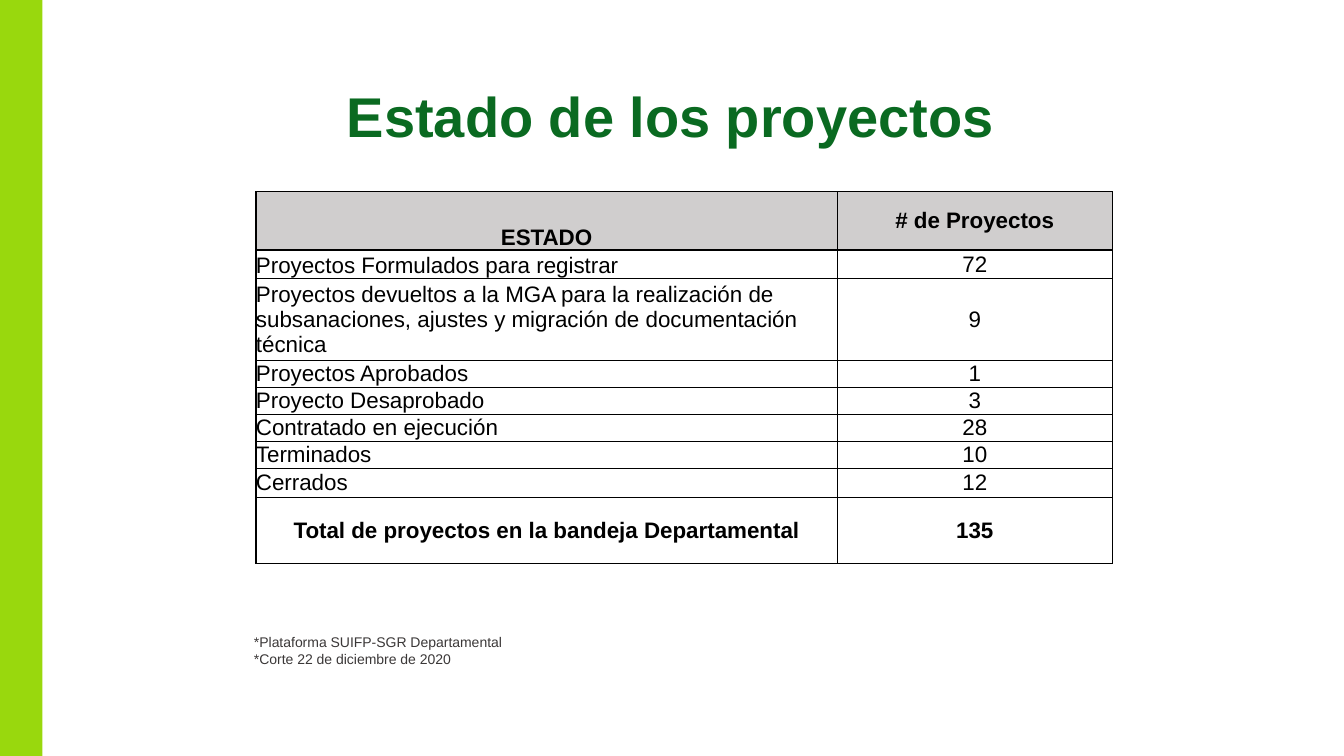
from lxml import etree
from pptx import Presentation
from pptx import util as u
from pptx.dml.color import RGBColor
from pptx.enum import shapes, text
from pptx.oxml import ns

HUES = {"title": "0A6A21", "band": "99D80D", "head": "D0CECE",
        "ink": "000000", "note": "3B3838"}
ROWS = [
    ("ESTADO", "# de Proyectos", 1.47),
    ("Proyectos Formulados para registrar", "72", 0.72),
    ("Proyectos devueltos a la MGA para la realización de subsanaciones, "
     "ajustes y migración de documentación técnica", "9", 2.06),
    ("Proyectos Aprobados", "1", 0.68),
    ("Proyecto Desaprobado", "3", 0.68),
    ("Contratado en ejecución", "28", 0.68),
    ("Terminados", "10", 0.69),
    ("Cerrados", "12", 0.72),
    ("Total de proyectos en la bandeja Departamental", "135", 1.67),
]
NOTES = ["*Plataforma SUIFP-SGR Departamental", "*Corte 22 de diciembre de 2020"]
WIDE, HIGH = u.Cm(33.87), u.Cm(19.05)
CENTER = text.PP_ALIGN.CENTER


def hue(name):
    return RGBColor.from_string(HUES[name])


def add_run(para, words, size, name, bold=False, align=text.PP_ALIGN.LEFT):
    para.alignment = align
    run = para.add_run()
    run.text = words
    font = run.font
    font.name, font.size, font.bold = "Arial", u.Pt(size), bold
    font.color.rgb = hue(name)


def add_title(slide, words):
    title = slide.shapes.title
    title.left, title.top = u.Cm(3.2), u.Cm(1.93)
    title.width, title.height = u.Cm(27.38), u.Cm(1.96)
    add_run(title.text_frame.paragraphs[0], words, 40, "title", True, CENTER)


def add_band(slide):
    band = slide.shapes.add_shape(
        shapes.MSO_SHAPE.RECTANGLE, 0, 0, u.Cm(1.07), HIGH)
    band.shadow.inherit = False
    band.fill.solid()
    band.fill.fore_color.rgb = hue("band")
    band.line.fill.background()


def add_notes(slide, lines):
    box = slide.shapes.add_textbox(
        u.Cm(6.15), u.Cm(15.85), u.Cm(8.56), u.Cm(1.12))
    frame = box.text_frame
    frame.word_wrap = True
    for i, line in enumerate(lines):
        para = frame.add_paragraph() if i else frame.paragraphs[0]
        add_run(para, line, 10, "note")


def add_edge(cell, side, width):
    props = cell._tc.get_or_add_tcPr()
    edge = etree.SubElement(props, ns.qn("a:ln" + side), w=str(u.Pt(width)))
    fill = etree.SubElement(edge, ns.qn("a:solidFill"))
    etree.SubElement(fill, ns.qn("a:srgbClr"), val=HUES["ink"])


def fill_cell(cell, words, row, col):
    last = len(ROWS) - 1
    ends = row in (0, last)
    # Thick lines frame the table, the header and the total
    thick = {"L": col == 0, "R": col == 1,
             "T": ends or row == 1, "B": ends or row == last - 1}
    for side, heavy in thick.items():
        add_edge(cell, side, 1 if heavy else 0.5)
    if row == 0:
        cell.fill.solid()
        cell.fill.fore_color.rgb = hue("head")
    else:
        cell.fill.background()
    cell.margin_left = cell.margin_right = 0
    cell.margin_top = cell.margin_bottom = 0
    low = col == 0 and row < 2
    cell.vertical_anchor = (text.MSO_ANCHOR.BOTTOM if low
                            else text.MSO_ANCHOR.MIDDLE)
    align = CENTER if ends or col else text.PP_ALIGN.LEFT
    add_run(cell.text_frame.paragraphs[0], words, 16, "ink", ends, align)


def add_grid(slide):
    high = u.Cm(sum(row[2] for row in ROWS))
    table = slide.shapes.add_table(
        len(ROWS), 2, u.Cm(6.45), u.Cm(4.83), u.Cm(21.58), high).table
    table.first_row = table.horz_banding = False
    table.columns[0].width, table.columns[1].width = u.Cm(14.65), u.Cm(6.93)
    for r, (state, count, tall) in enumerate(ROWS):
        table.rows[r].height = u.Cm(tall)
        for c, words in enumerate((state, count)):
            fill_cell(table.cell(r, c), words, r, c)


def main():
    deck = Presentation()
    deck.slide_width, deck.slide_height = WIDE, HIGH
    slide = deck.slides.add_slide(deck.slide_layouts[5])
    add_title(slide, "Estado de los proyectos")
    add_band(slide)
    add_notes(slide, NOTES)
    add_grid(slide)
    deck.save("out.pptx")


if __name__ == "__main__":
    main()
